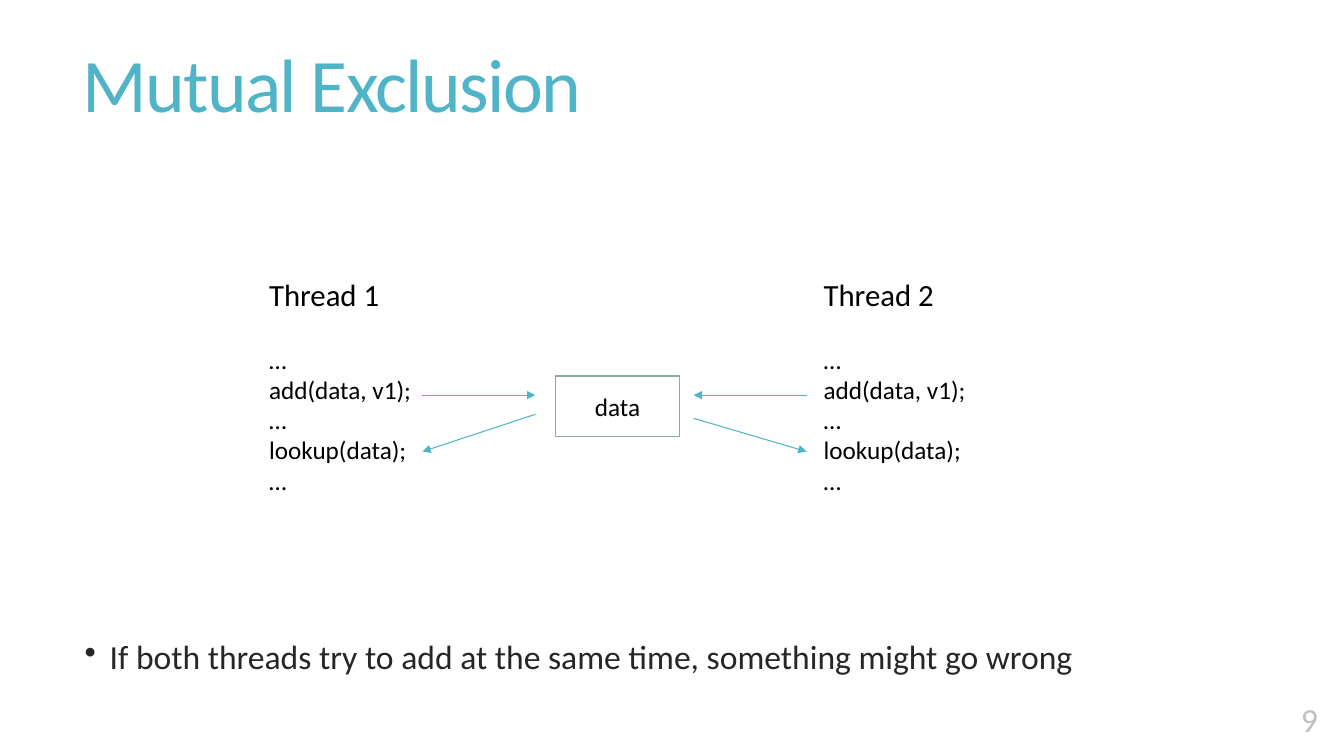
from lxml.etree import SubElement
from pptx import Presentation
from pptx.dml.color import RGBColor
from pptx.enum.shapes import MSO_CONNECTOR as Link, MSO_SHAPE as Form
from pptx.enum.text import MSO_ANCHOR as Anchor, PP_ALIGN as Align
from pptx.oxml.ns import qn
from pptx.util import Pt

PX = 9144  # 100 px to the inch
TEAL, GREEN = "50B4C8", "84AC9D"
BLACK, DARK, GRAY, WHITE = "000000", "262626", "BFBFBF", "FFFFFF"
CODE = ["…", "add(data, v1);", "…", "lookup(data);", "…"]


def px(*sizes):
    return [size * PX for size in sizes]


def color(code):
    return RGBColor.from_string(code)


def style(para, text, size, code, align=Align.LEFT):
    para.text = text
    para.alignment = align
    font = para.font
    font.name, font.size = "Calibri", Pt(size)
    font.color.rgb = color(code)


def add_text(slide, box, lines, code=BLACK, anchor=Anchor.TOP, align=Align.LEFT):
    """Add a text box from (text, size) lines and return its paragraphs."""
    frame = slide.shapes.add_textbox(*px(*box)).text_frame
    frame.word_wrap = True
    frame.vertical_anchor = anchor
    for i, (text, size) in enumerate(lines):
        para = frame.add_paragraph() if i else frame.paragraphs[0]
        style(para, text, size, code, align)
    return frame.paragraphs


def add_title(slide, text):
    para = add_text(slide, (72, -2, 1178, 181), [(text, 54)], TEAL, Anchor.MIDDLE)[0]
    para.line_spacing = 0.85
    para.runs[0].font._element.set("spc", "-120")


def add_bullet(slide, text):
    para = add_text(slide, (74, 632, 1176, 50), [(text, 24)], DARK)[0]
    para.line_spacing = 0.85
    props = para._p.get_or_add_pPr()
    props.set("marL", str(25 * PX))
    props.set("indent", str(-25 * PX))
    mark = SubElement(props, qn("a:buChar"), char="•")
    props.remove(mark)
    props.find(qn("a:lnSpc")).addnext(mark)


def add_thread(slide, left, name):
    lines = [(name, 22)] + [(line, 18) for line in CODE]
    head = add_text(slide, (left, 269, 291, 229), lines)[0]
    head.space_after = Pt(22)


def add_data(slide):
    box = slide.shapes.add_shape(Form.RECTANGLE, *px(551, 373, 123, 60))
    box.shadow.inherit = False
    box.fill.solid()
    box.fill.fore_color.rgb = color(WHITE)
    box.line.color.rgb = color(GREEN)
    box.line.width = Pt(1)
    box.text_frame.vertical_anchor = Anchor.MIDDLE
    style(box.text_frame.paragraphs[0], "data", 18, BLACK, Align.CENTER)


def add_arrow(slide, *ends):
    link = slide.shapes.add_connector(Link.STRAIGHT, *px(*ends))
    link.line.color.rgb = color(TEAL)
    link.line.width = Pt(0.75)
    SubElement(link.line._get_or_add_ln(), qn("a:tailEnd"), type="triangle")
    SubElement(link._element.spPr, qn("a:effectLst"))


def main():
    deck = Presentation()
    deck.slide_width, deck.slide_height = px(1333, 750)
    slide = deck.slides.add_slide(deck.slide_layouts[6])
    add_title(slide, "Mutual Exclusion")
    add_bullet(slide, "If both threads try to add at the same time, something might go wrong")
    add_text(slide, (1093, 669, 224, 69), [("9", 24)], GRAY, Anchor.BOTTOM, Align.RIGHT)
    add_data(slide)
    # outer and inner arrow ends, and the height where the lookup arrow starts
    threads = [("Thread 1", 257, 419, 531, 411), ("Thread 2", 807, 800, 688, 415)]
    for name, left, outer, inner, start in threads:
        add_thread(slide, left, name)
        add_arrow(slide, outer, 392, inner, 392)
        add_arrow(slide, inner, start, outer, 448)
    deck.save("out.pptx")


if __name__ == "__main__":
    main()
